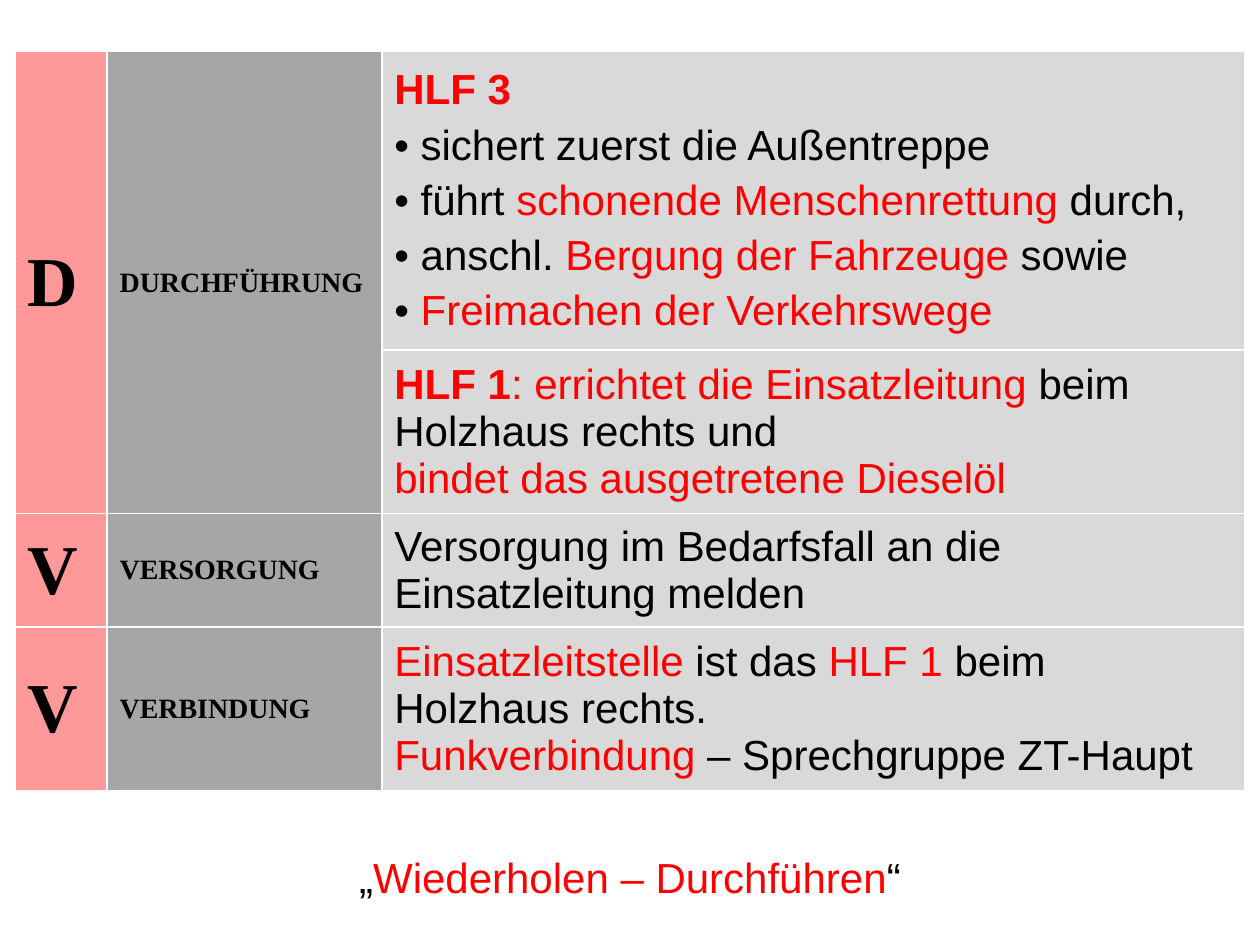
import pptx
import pptx.dml.color
import pptx.enum.text
import pptx.oxml
import pptx.oxml.ns
import pptx.util

Inches, Pt = pptx.util.Inches, pptx.util.Pt
RGBColor = pptx.dml.color.RGBColor
BLACK = RGBColor(0x00, 0x00, 0x00)
RED = RGBColor(0xFF, 0x00, 0x00)
PINK = RGBColor(0xFF, 0x99, 0x99)
GREY = RGBColor(0xA6, 0xA6, 0xA6)
PALE = RGBColor(0xD9, 0xD9, 0xD9)

COLS = [0.73, 2.18, 6.85]
ROWS = [2.36, 1.3, 0.9, 1.3]
FILLS = [PINK, GREY, PALE]
BREAK = ("\n", BLACK)

# Letter and keyword by table row
KEYS = {0: ("D", "DURCHFÜHRUNG"), 2: ("V", "VERSORGUNG"), 3: ("V", "VERBINDUNG")}

# One list per row; a paragraph is (space before, bullet, runs)
GAP = 4.8
TASKS = [
    [
        (GAP, False, [("HLF 3", RED, True)]),
        (GAP, True, [(" sichert zuerst die Außentreppe", BLACK)]),
        (GAP, True, [(" führt", BLACK), (" schonende Menschenrettung", RED),
                     (" durch,", BLACK)]),
        (GAP, True, [(" anschl. ", BLACK), ("Bergung der Fahrzeuge", RED),
                     (" sowie", BLACK)]),
        (GAP, True, [(" ", BLACK), ("Freimachen der Verkehrswege", RED)]),
    ],
    [
        (0, False, [("HLF 1", RED, True), (": errichtet die Einsatzleitung ", RED),
                    ("beim Holzhaus rechts und", BLACK), BREAK,
                    ("bindet das ausgetretene Dieselöl", RED)]),
    ],
    [
        (0, False, [("Versorgung im Bedarfsfall an die Einsatzleitung melden", BLACK)]),
    ],
    [
        (GAP, False, [("Einsatzleitstelle", RED), (" ist das ", BLACK),
                      ("HLF 1 ", RED), ("beim Holzhaus rechts.", BLACK)]),
        (0, False, [("Funkverbindung ", RED), ("– Sprechgruppe ZT-Haupt", BLACK)]),
    ],
]
MOTTO = [("„", BLACK), ("Wiederholen – Durchführen", RED), ("“", BLACK)]


def write(para, runs, size=24, face="Arial"):
    for text, color, *bold in runs:
        if text == "\n":
            para.add_line_break()
            continue
        run = para.add_run()
        run.text = text
        font = run.font
        font.size, font.name, font.bold = Pt(size), face, bool(bold)
        font.color.rgb = color


def dot(para):
    """Give the paragraph a bullet without a hanging indent."""
    props = para._p.get_or_add_pPr()
    props.set("marL", "0")
    props.set("indent", "0")
    mark = pptx.oxml.ns.nsdecls("a")
    props.append(pptx.oxml.parse_xml(f'<a:buFont {mark} typeface="Arial"/>'))
    props.append(pptx.oxml.parse_xml(f'<a:buChar {mark} char="•"/>'))


def style(cell, color):
    props = cell._tc.get_or_add_tcPr()
    for side in ("lnL", "lnR", "lnT", "lnB"):
        props.append(pptx.oxml.parse_xml(
            f'<a:{side} {pptx.oxml.ns.nsdecls("a")} w="12700"><a:solidFill>'
            f'<a:srgbClr val="FFFFFF"/></a:solidFill></a:{side}>'))
    cell.fill.solid()
    cell.fill.fore_color.rgb = color
    cell.vertical_anchor = pptx.enum.text.MSO_ANCHOR.MIDDLE
    cell.margin_left = cell.margin_right = Inches(0.1)
    cell.margin_top = cell.margin_bottom = Inches(0.05)


def main():
    deck = pptx.Presentation()
    deck.slide_width, deck.slide_height = Inches(10), Inches(7.5)
    slide = deck.slides.add_slide(deck.slide_layouts[6])

    box = slide.shapes.add_textbox(Inches(0.12), Inches(6.71), Inches(9.76), Inches(0.51))
    box.text_frame.word_wrap = True
    para = box.text_frame.paragraphs[0]
    para.alignment = pptx.enum.text.PP_ALIGN.CENTER
    write(para, MOTTO)

    table = slide.shapes.add_table(
        len(ROWS), len(COLS), Inches(0.12), Inches(0.41),
        Inches(sum(COLS)), Inches(sum(ROWS))).table
    table.first_row = table.horz_banding = False
    for col, width in zip(table.columns, COLS):
        col.width = Inches(width)
    for row, height in zip(table.rows, ROWS):
        row.height = Inches(height)
    for y in range(len(ROWS)):
        for x, color in enumerate(FILLS):
            style(table.cell(y, x), color)
    for x in (0, 1):
        table.cell(0, x).merge(table.cell(1, x))

    for y, words in KEYS.items():
        for x, (word, size) in enumerate(zip(words, (40, 16))):
            para = table.cell(y, x).text_frame.paragraphs[0]
            write(para, [(word, BLACK, True)], size, "Times New Roman")
    for y, task in enumerate(TASKS):
        frame = table.cell(y, 2).text_frame
        for i, (gap, bullet, runs) in enumerate(task):
            para = frame.add_paragraph() if i else frame.paragraphs[0]
            para.space_before = Pt(gap)
            if bullet:
                dot(para)
            write(para, runs)

    deck.save("out.pptx")


if __name__ == "__main__":
    main()
